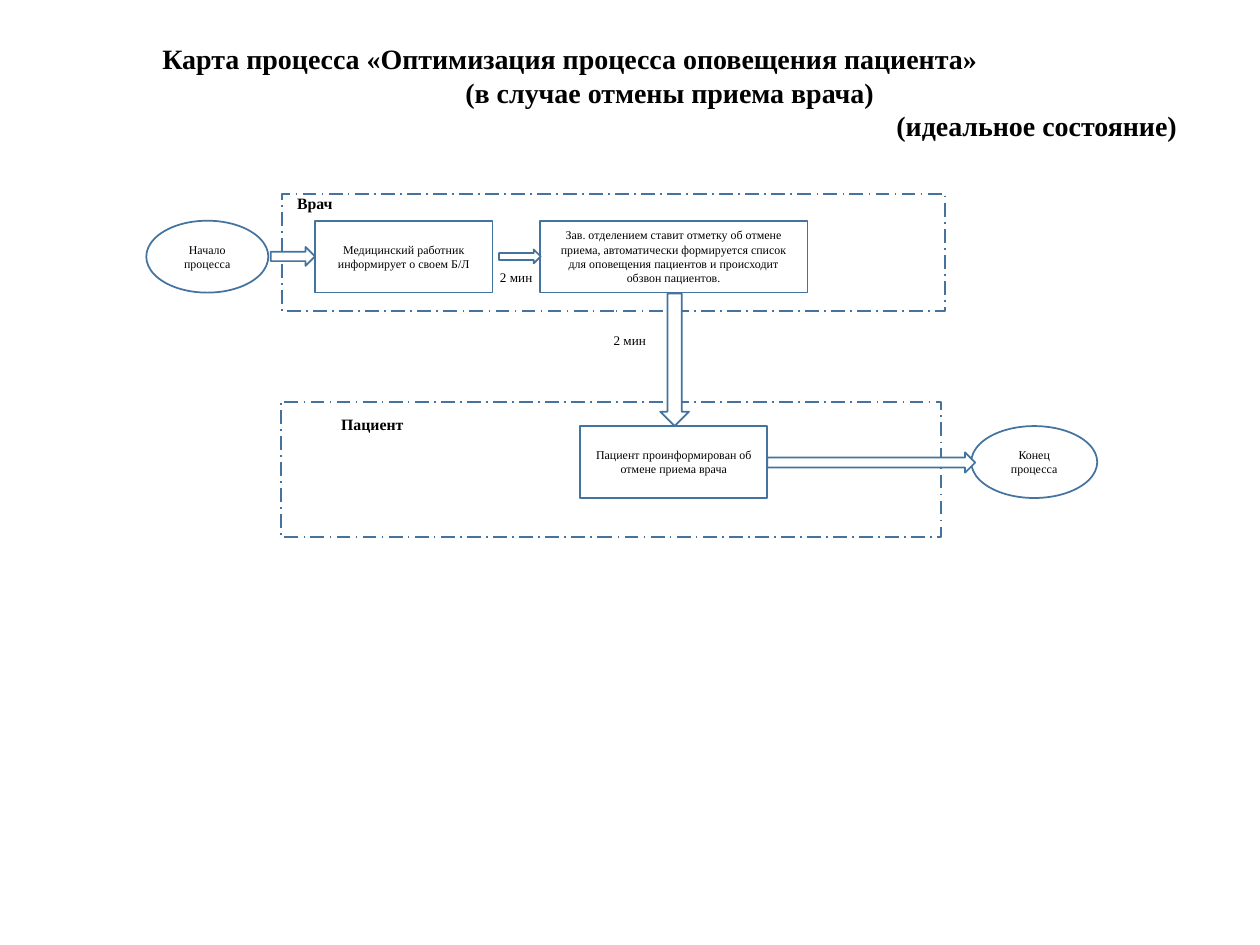
from pptx import Presentation
from pptx import util as u
from pptx.dml.color import RGBColor
from pptx.enum import dml, shapes, text

COLORS = {"fill": "FFFFFF", "line": "43739E", "text": "000000"}
FONT = "Times New Roman"
SHAPE = shapes.MSO_SHAPE
ALIGN = text.PP_ALIGN


class ProcessMap:
    def __init__(self, prs):
        self.s = prs.slides.add_slide(prs.slide_layouts[5])

    def color(self, name):
        return RGBColor.from_string(COLORS[name])

    def style(self, p, size, bold=False, align=ALIGN.LEFT):
        p.alignment = align
        for r in p.runs:
            r.font.name = FONT
            r.font.size = u.Pt(size)
            r.font.bold = bold
            r.font.color.rgb = self.color("text")

    def title(self, box, lines):
        sp = self.s.shapes.title
        sp.left, sp.top, sp.width, sp.height = map(u.Cm, box)
        tf = sp.text_frame
        tf.text = "\n".join(line for line, _ in lines)
        tf.vertical_anchor = text.MSO_ANCHOR.TOP
        tf.word_wrap = True
        tf.auto_size = text.MSO_AUTO_SIZE.SHAPE_TO_FIT_TEXT
        for p, (_, align) in zip(tf.paragraphs, lines):
            self.style(p, 16, True, align)

    def shape(self, kind, box):
        sp = self.s.shapes.add_shape(kind, *map(u.Cm, box))
        sp.shadow.inherit = False
        sp.fill.solid()
        sp.fill.fore_color.rgb = self.color("fill")
        sp.line.color.rgb = self.color("line")
        sp.line.width = u.Pt(1)
        return sp

    def lane(self, box):
        sp = self.shape(SHAPE.RECTANGLE, box)
        sp.line.dash_style = dml.MSO_LINE.LONG_DASH_DOT

    def step(self, kind, box, words):
        tf = self.shape(kind, box).text_frame
        tf.text = words
        tf.word_wrap = True
        tf.vertical_anchor = text.MSO_ANCHOR.MIDDLE
        self.style(tf.paragraphs[0], 6.8, align=ALIGN.CENTER)

    def label(self, box, words, size, bold=False):
        tf = self.s.shapes.add_textbox(*map(u.Cm, box)).text_frame
        tf.text = words
        tf.word_wrap = True
        tf.auto_size = text.MSO_AUTO_SIZE.SHAPE_TO_FIT_TEXT
        self.style(tf.paragraphs[0], size, bold)


def main():
    prs = Presentation()
    prs.slide_width, prs.slide_height = u.Cm(25.4), u.Cm(19.05)
    m = ProcessMap(prs)

    m.title((3.02, 0.71, 20.96, 2.31), [
        ("Карта процесса «Оптимизация процесса оповещения пациента»", ALIGN.LEFT),
        ("(в случае отмены приема врача)", ALIGN.CENTER),
        ("(идеальное состояние)", ALIGN.RIGHT),
    ])

    m.lane((5.66, 8.1, 13.31, 2.72))
    m.lane((5.69, 3.91, 13.36, 2.36))

    height, doctor_y, patient_y = 1.45, 4.45, 8.59
    for kind, x, y, width, words in [
        (SHAPE.RECTANGLE, 6.35, doctor_y, 3.58,
         "Медицинский работник информирует о своем Б/Л"),
        (SHAPE.RECTANGLE, 10.88, doctor_y, 5.4,
         "Зав. отделением ставит отметку об отмене приема, автоматически "
         "формируется список для оповещения пациентов и происходит обзвон пациентов."),
        (SHAPE.RECTANGLE, 11.7, patient_y, 3.77,
         "Пациент проинформирован об отмене приема врача"),
        (SHAPE.OVAL, 2.95, doctor_y, 2.46, "Начало процесса"),
        (SHAPE.OVAL, 19.58, patient_y, 2.54, "Конец процесса"),
    ]:
        m.step(kind, (x, y, width, height), words)

    for kind, box in [
        (SHAPE.RIGHT_ARROW, (5.46, 4.98, 0.89, 0.38)),
        (SHAPE.RIGHT_ARROW, (10.06, 5.03, 0.84, 0.28)),
        (SHAPE.DOWN_ARROW, (13.31, 5.92, 0.58, 2.67)),
        (SHAPE.RIGHT_ARROW, (15.47, 9.12, 4.19, 0.41)),
    ]:
        m.shape(kind, box)

    for x, y in [(9.83, 5.31), (12.12, 6.58)]:
        m.label((x, y, 1.47, 0.74), "2 мин", 7.5)
    m.label((5.74, 3.78, 1.65, 0.84), "Врач", 9, True)
    m.label((6.63, 8.23, 2.31, 0.84), "Пациент", 9, True)

    prs.save("out.pptx")


if __name__ == "__main__":
    main()
